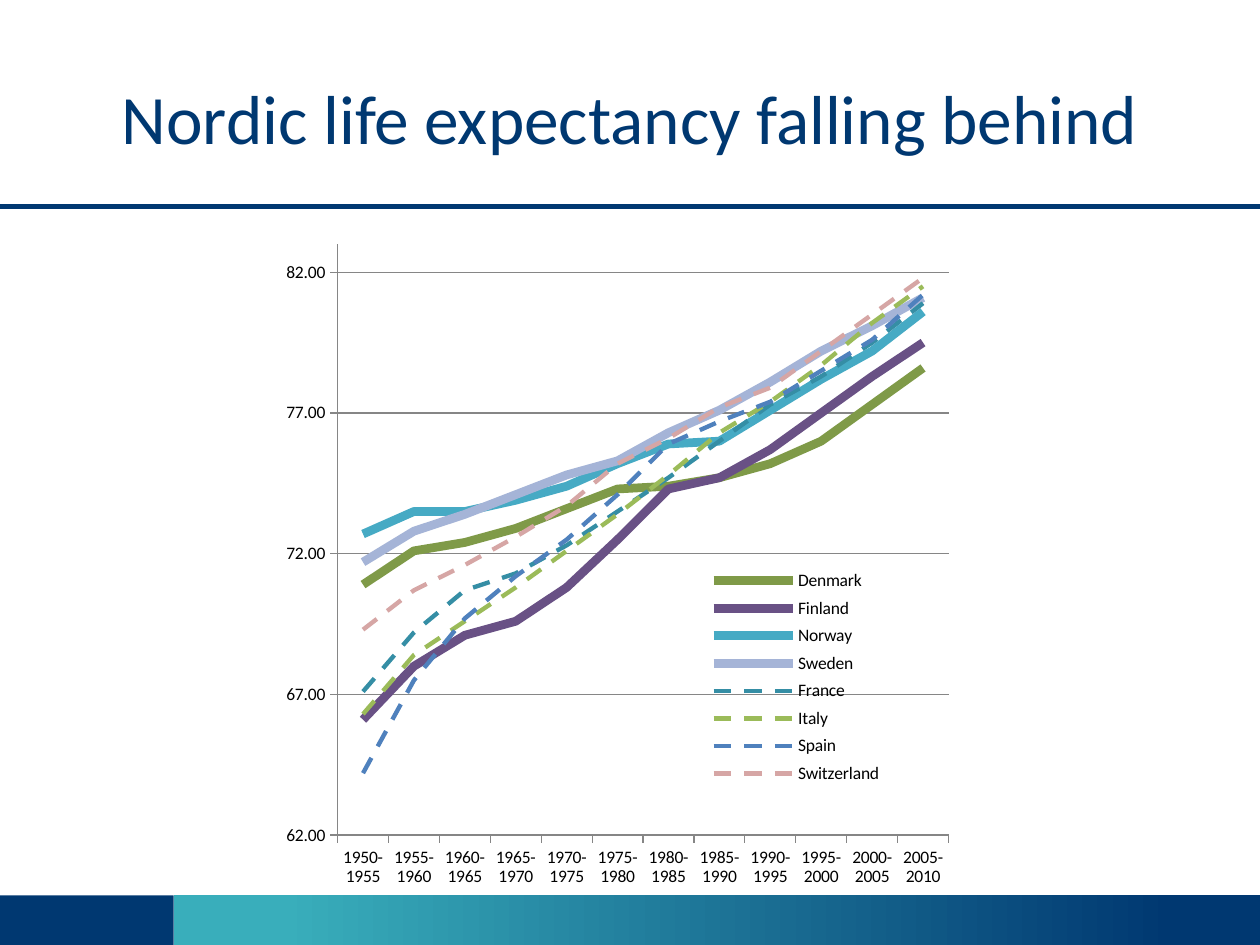
import pptx
import pptx.chart.data
import pptx.dml.color
import pptx.enum.chart
import pptx.enum.dml
import pptx.enum.shapes
import pptx.enum.text
import pptx.oxml
import pptx.oxml.ns
import pptx.util

Cm, Pt = pptx.util.Cm, pptx.util.Pt

TITLE = "Nordic life expectancy falling behind"
PERIODS = [f"{year}-{year + 5}" for year in range(1950, 2010, 5)]
NORDIC = [
    ("Denmark", "7F9A48", (70.9, 72.1, 72.4, 72.9, 73.6, 74.3, 74.4, 74.7, 75.2, 76, 77.3, 78.6)),
    ("Finland", "695185", (66.1, 68, 69.1, 69.6, 70.8, 72.5, 74.3, 74.7, 75.7, 77, 78.3, 79.5)),
    ("Norway", "46AAC4", (72.7, 73.5, 73.5, 73.9, 74.4, 75.2, 75.9, 76, 77.1, 78.2, 79.2, 80.6)),
    ("Sweden", "A5B4D7", (71.7, 72.8, 73.4, 74.1, 74.8, 75.3, 76.3, 77.1, 78.1, 79.2, 80.1, 81.1)),
]
OTHERS = [
    ("France", "358EA5", (67.1, 69.2, 70.7, 71.3, 72.3, 73.5, 74.7, 76, 77.3, 78.3, 79.5, 80.9)),
    ("Italy", "9BBB59", (66.3, 68.4, 69.6, 70.8, 72.1, 73.4, 74.8, 76.3, 77.4, 78.7, 80.2, 81.5)),
    ("Spain", "4F81BD", (64.2, 67.5, 69.7, 71.2, 72.5, 74.1, 75.9, 76.7, 77.4, 78.5, 79.6, 81.2)),
    ("Switzerland", "D6A6A5", (69.3, 70.7, 71.6, 72.6, 73.7, 75.2, 76.1, 77.2, 77.9, 79.2, 80.5, 81.8)),
]
THEME = {
    "font": "Calibri", "navy": "003871", "teal": "39AEBB", "text": "000000",
    "grid": "868686", "title": 39.6, "chart": 10,
    "nordic_line": 5, "other_line": 2.5, "axis_line": 0.75, "rule": 2.5,
}
WIDTH, HEIGHT = 25.4, 19.05
FOOTER_TOP, FOOTER_SPLIT = 18.05, 3.5


def rgb(name):
    return pptx.dml.color.RGBColor.from_string(THEME.get(name, name))


def add_text(s, text, box, *, size, color, align, anchor):
    tf = s.shapes.add_textbox(*map(Cm, box)).text_frame
    tf.word_wrap = True
    tf.vertical_anchor = anchor
    p = tf.paragraphs[0]
    p.alignment = align
    r = p.add_run()
    r.text = text
    r.font.name, r.font.size = THEME["font"], Pt(size)
    r.font.color.rgb = rgb(color)


def add_bar(s, left, right):
    sp = s.shapes.add_shape(
        pptx.enum.shapes.MSO_SHAPE.RECTANGLE,
        Cm(left), Cm(FOOTER_TOP), Cm(right - left), Cm(HEIGHT - FOOTER_TOP))
    sp.shadow.inherit = False
    sp.line.fill.background()
    return sp.fill


def add_footer(s):
    fill = add_bar(s, 0, FOOTER_SPLIT)
    fill.solid()
    fill.fore_color.rgb = rgb("navy")
    fill = add_bar(s, FOOTER_SPLIT, WIDTH)
    fill.gradient()
    fill.gradient_angle = 0
    for stop, (position, color) in zip(fill.gradient_stops, [(0.1, "teal"), (0.92, "navy")]):
        stop.position = position
        stop.color.rgb = rgb(color)


def add_rule(s, top):
    line = s.shapes.add_connector(
        pptx.enum.shapes.MSO_CONNECTOR.STRAIGHT, Cm(0), Cm(top), Cm(WIDTH), Cm(top))
    line.line.color.rgb = rgb("navy")
    line.line.width = Pt(THEME["rule"])
    line._element.spPr.append(pptx.oxml.parse_xml(
        f'<a:effectLst {pptx.oxml.ns.nsdecls("a")}/>'))


def place(element, index, box, inner=False):
    for old in element.findall(pptx.oxml.ns.qn("c:layout")):
        element.remove(old)
    target = '<c:layoutTarget val="inner"/>' if inner else ""
    modes = "".join(f'<c:{axis}Mode val="edge"/>' for axis in "xy")
    sizes = "".join(f'<c:{side} val="{value}"/>' for side, value in zip("xywh", box))
    element.insert(index, pptx.oxml.parse_xml(
        f'<c:layout {pptx.oxml.ns.nsdecls("c")}><c:manualLayout>'
        f'{target}{modes}{sizes}</c:manualLayout></c:layout>'))


def style_line(line, color, width, dash=None):
    line.color.rgb = rgb(color)
    line.width = Pt(width)
    if dash:
        line.dash_style = dash


def add_line_chart(s, box):
    data = pptx.chart.data.CategoryChartData()
    data.categories = PERIODS
    for name, _, values in NORDIC + OTHERS:
        data.add_series(name, values)
    chart = s.shapes.add_chart(
        pptx.enum.chart.XL_CHART_TYPE.LINE, *map(Cm, box), data).chart
    chart.has_title = False
    chart.font.name, chart.font.size = THEME["font"], Pt(THEME["chart"])
    chart.font.color.rgb = rgb("text")
    chart.plots[0].vary_by_categories = False

    dash = pptx.enum.dml.MSO_LINE.DASH
    styles = [(c, THEME["nordic_line"], None) for _, c, _ in NORDIC]
    styles += [(c, THEME["other_line"], dash) for _, c, _ in OTHERS]
    for series, style in zip(chart.plots[0].series, styles):
        series.smooth = False
        series.marker.style = pptx.enum.chart.XL_MARKER_STYLE.NONE
        style_line(series.format.line, *style)

    values = chart.value_axis
    values.minimum_scale, values.maximum_scale, values.major_unit = 62, 83, 5
    values.tick_labels.number_format = r"##0.00;\-##0.00;0"
    values.tick_labels.number_format_is_linked = False
    values.has_major_gridlines = True
    style_line(values.major_gridlines.format.line, "grid", THEME["axis_line"])
    for axis in (values, chart.category_axis):
        axis.major_tick_mark = pptx.enum.chart.XL_TICK_MARK.OUTSIDE
        style_line(axis.format.line, "grid", THEME["axis_line"])

    chart.has_legend = True
    chart.legend.position = pptx.enum.chart.XL_LEGEND_POSITION.RIGHT
    chart.legend.include_in_layout = True
    place(chart.legend._element, 1, (0.63, 0.49, 0.25, 0.34))
    place(chart._chartSpace.chart.plotArea, 0, (0.14, 0.015, 0.819, 0.88), inner=True)


def main():
    prs = pptx.Presentation()
    prs.slide_width, prs.slide_height = Cm(WIDTH), Cm(HEIGHT)
    s = prs.slides.add_slide(prs.slide_layouts[6])
    add_footer(s)
    add_rule(s, 4.16)
    add_text(s, TITLE, (1.27, 0.76, 22.86, 3.18), size=THEME["title"], color="navy",
             align=pptx.enum.text.PP_ALIGN.CENTER, anchor=pptx.enum.text.MSO_ANCHOR.MIDDLE)
    add_line_chart(s, (4.7, 4.72, 15.04, 13.54))
    prs.save("out.pptx")


if __name__ == "__main__":
    main()
